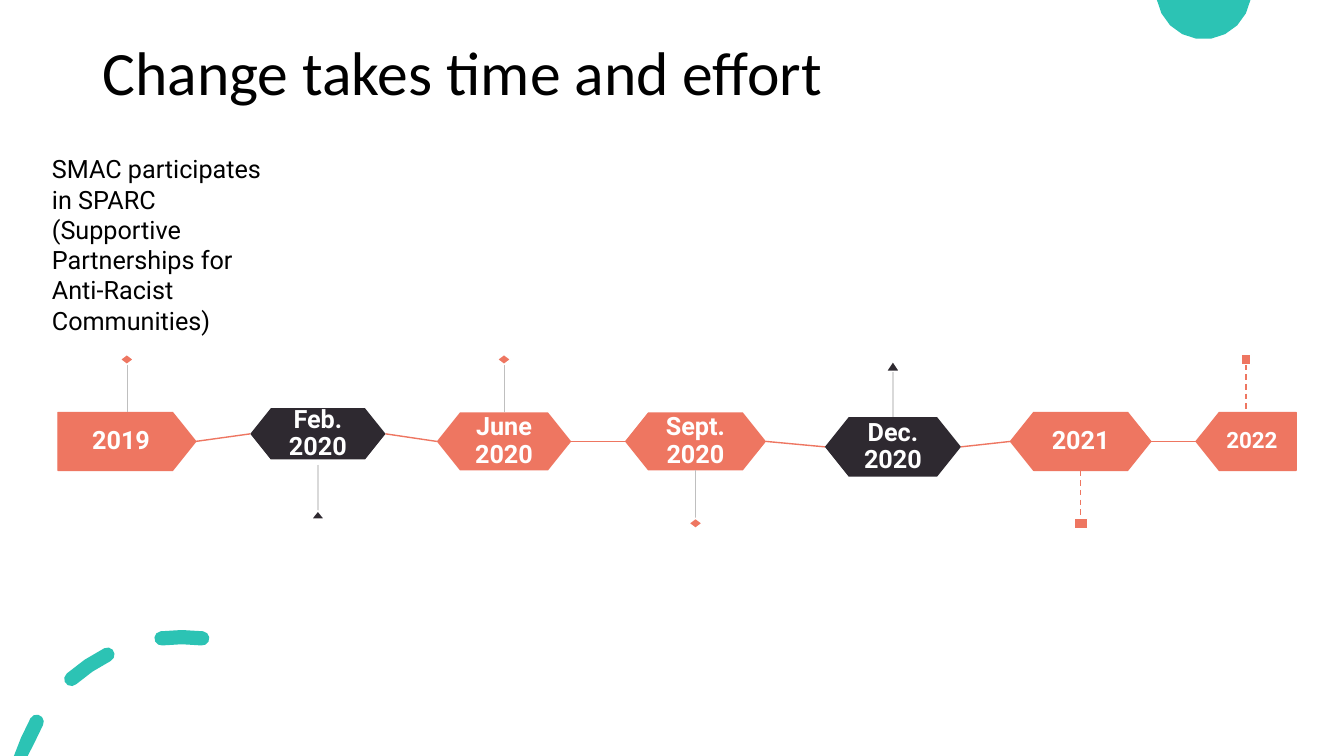
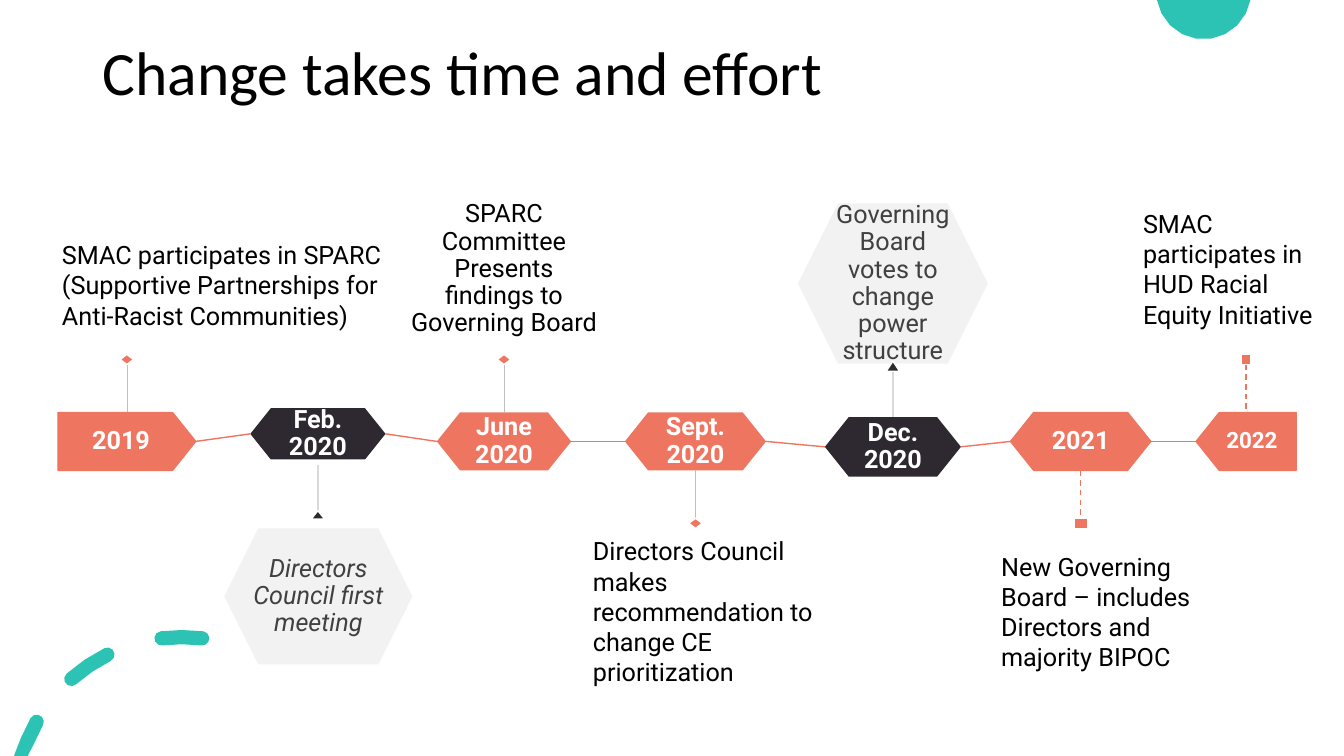
"""Build two timeline slides on a grid of 160 columns by 90 rows."""
from math import cos, radians, sin

from lxml import etree
from pptx import Presentation
from pptx.dml.color import RGBColor
from pptx.enum.dml import MSO_LINE
from pptx.enum.shapes import MSO_CONNECTOR, MSO_SHAPE as Preset
from pptx.enum.text import MSO_ANCHOR as Anchor, MSO_AUTO_SIZE, PP_ALIGN as Align
from pptx.oxml.ns import qn
from pptx.util import Emu, Inches, Pt

UNIT = 76200
TEAL, CORAL, DARK = "2CC3B4", "EE7661", "2E2930"
PALE, GREY, WHITE, BLACK = "F2F2F2", "404040", "FFFFFF", "000000"
SILVER, MIST = "BFBFBF", "D9D9D9"
TITLE = "Change takes time and effort"
SPARC = "SMAC participates in SPARC (Supportive Partnerships for Anti-Racist Communities)"
TRIANGLE = Preset.ISOSCELES_TRIANGLE

MILESTONES = [
    ("2019", Preset.PENTAGON, (6.9, 16.4, 52.55, 6.9), CORAL, Preset.DIAMOND, (42.2, 1.6, 1.2)),
    ("Feb. 2020", Preset.HEXAGON, (29.8, 16.1, 51.65, 6.1), DARK, TRIANGLE, (60.8, 1.6, 1)),
    ("June 2020", Preset.HEXAGON, (52, 16, 52.55, 6.9), CORAL, Preset.DIAMOND, (42.2, 1.6, 1.2)),
    ("Sept. 2020", Preset.HEXAGON, (74.4, 16.8, 52.55, 6.9), CORAL, Preset.DIAMOND, (61.7, 1.6, 1.2)),
    ("Dec. 2020", Preset.HEXAGON, (98.2, 16.2, 53.2, 7.1), DARK, TRIANGLE, (43, 1.6, 1.2)),
    ("2021", Preset.HEXAGON, (120.3, 16.7, 52.55, 6.9), CORAL, Preset.RECTANGLE, (61.7, 1.6, 1.2)),
    ("2022", Preset.PENTAGON, (142.4, 11.9, 52.55, 6.9), CORAL, Preset.RECTANGLE, (42.2, 1.2, 1.2)),
]
STEMS = {
    Preset.DIAMOND: (SILVER, 0.25, None),
    TRIANGLE: (MIST, 1, None),
    Preset.RECTANGLE: (CORAL, 1, MSO_LINE.DASH),
}
NOTE = {"inset": (0.1, 0.05)}
CALLOUT = {"inset": (0, 0.17), "align": Align.CENTER, "spacing": 0.9}
BADGE = {**CALLOUT, "anchor": Anchor.MIDDLE, "tint": GREY}
SLIDES = [
    [(SPARC, (5, 17.7, 29.4, 23), NOTE)],
    [
        (SPARC, (6.2, 27.9, 44.4, 12.1), NOTE),
        ("Directors Council first meeting", (26.7, 62.9, 22.4, 16.2), {**BADGE, "italic": True}),
        ("SPARC Committee Presents findings to Governing Board", (48.8, 24, 22.4, 18.2),
         {**CALLOUT, "anchor": Anchor.BOTTOM}),
        ("Directors Council makes recommendation to change CE prioritization",
         (69.4, 63.2, 29.4, 19.4), NOTE),
        ("Governing Board votes to change power structure", (95, 24.2, 22.6, 19.1), BADGE),
        ("New Governing Board – includes Directors and majority BIPOC", (118, 65, 27.5, 15.7), NOTE),
        ("SMAC participates in HUD Racial Equity Initiative", (134.9, 24.2, 23, 15.7), NOTE),
    ],
]


def paint(shape, fill, line=None):
    """Give a shape a flat fill and an optional one-point outline."""
    shape.shadow.inherit = False
    shape.fill.solid()
    shape.fill.fore_color.rgb = RGBColor.from_string(fill)
    if line:
        shape.line.color.rgb = RGBColor.from_string(line)
        shape.line.width = Pt(1)
    else:
        shape.line.fill.background()


def write(shape, text, inset, size=18, tint=BLACK, name="Roboto", align=Align.LEFT,
          anchor=Anchor.TOP, spacing=1, bold=False, italic=False):
    """Put one formatted paragraph into a shape."""
    frame = shape.text_frame
    frame.text = text
    frame.word_wrap = True
    frame.auto_size = MSO_AUTO_SIZE.NONE
    frame.vertical_anchor = anchor
    frame.margin_left = frame.margin_right = Inches(inset[0])
    frame.margin_top = frame.margin_bottom = Inches(inset[1])
    paragraph = frame.paragraphs[0]
    paragraph.alignment = align
    paragraph.line_spacing = spacing
    font = paragraph.runs[0].font
    font.name, font.size, font.bold, font.italic = name, Pt(size), bold, italic
    font.color.rgb = RGBColor.from_string(tint)


presentation = Presentation()
presentation.slide_width = Emu(160 * UNIT)
presentation.slide_height = Emu(90 * UNIT)

disc = [(143.3 + 5.64 * cos(radians(turn)), max(0, 5.64 * sin(radians(turn)) - 0.96))
        for turn in range(9, 172, 18)]
dashes = []
for start, end in [(60.5, 75), (26.5, 41.5), (-7, 7)]:
    middle_angle = (start + end) / 2
    trail = [(turn, end) for turn in range(0, 181, 36)] + [(180, middle_angle)]
    trail += [(turn, start) for turn in range(180, 361, 36)] + [(360, middle_angle)]
    dash_outline = []
    for turn, angle in trail:
        radius = 19.85 + 0.85 * cos(radians(turn))
        bearing = radians(angle) + 0.85 / 19.85 * sin(radians(turn))
        dash_outline.append((21.65 - radius * sin(bearing), min(90, 95.7 - radius * cos(bearing))))
    dashes.append(dash_outline)

for callouts in SLIDES:
    slide = presentation.slides.add_slide(presentation.slide_layouts[5])
    shapes = slide.shapes
    title = shapes.title
    title.left, title.top, title.width, title.height = [
        Emu(round(value * UNIT)) for value in (11, 0.3, 138, 17.4)]
    write(title, TITLE, (0.1, 0.05), 44, name="Calibri", anchor=Anchor.MIDDLE, spacing=0.9)

    for contours in ([disc], dashes):
        builder = None
        for contour in contours:
            points = [(round(x * UNIT), round(y * UNIT)) for x, y in contour]
            if builder is None:
                builder = shapes.build_freeform(*points[0], scale=1.0)
            else:
                builder.move_to(*points[0])
            builder.add_line_segments(points[1:], close=True)
        paint(builder.convert_to_shape(), TEAL)

    for text, box, style in callouts:
        place = [Emu(round(value * UNIT)) for value in box]
        if style.get("tint") == GREY:
            callout = shapes.add_shape(Preset.HEXAGON, *place)
            paint(callout, PALE)
        else:
            callout = shapes.add_textbox(*place)
        write(callout, text, **style)

    connectors = []
    previous_end = None
    for label, preset, (left, width, middle, height), fill, tip_preset, tip_size in MILESTONES:
        tip_top, tip_width, tip_height = tip_size
        top, centre = middle - height / 2, left + width / 2
        marker_box = (left, top, width, height)
        marker = shapes.add_shape(preset, *[Emu(round(value * UNIT)) for value in marker_box])
        marker.adjustments[0] = 0.4
        paint(marker, fill, fill if preset == Preset.PENTAGON or label == "2021" else None)
        last = label == "2022"
        if last:
            marker.element.spPr.xfrm.set("flipH", "1")
        write(marker, label, (0.13, 0.13) if last else (0.15, 0.15), 16 if last else 18, WHITE,
              align=Align.CENTER, anchor=Anchor.MIDDLE, spacing=0.9, bold=True)

        if previous_end:
            ends = [Emu(round(value * UNIT)) for value in (*previous_end, left, middle)]
            link = shapes.add_connector(MSO_CONNECTOR.STRAIGHT, *ends)
            connectors.append((link, CORAL, 1, None))
        previous_end = (left + width, middle)

        above = tip_top < middle
        stem_top = tip_top + tip_height if above else top + height
        stem_bottom = top if above else tip_top
        if tip_preset == TRIANGLE and not above:
            stem_top += 0.6
        ends = [Emu(round(value * UNIT)) for value in (centre, stem_top, centre, stem_bottom)]
        stem = shapes.add_connector(MSO_CONNECTOR.STRAIGHT, *ends)
        connectors.append((stem, *STEMS[tip_preset]))
        tip_box = (centre - tip_width / 2, tip_top, tip_width, tip_height)
        tip = shapes.add_shape(tip_preset, *[Emu(round(value * UNIT)) for value in tip_box])
        paint(tip, DARK if tip_preset == TRIANGLE else CORAL, WHITE)
        if tip_preset != TRIANGLE and above:
            stem.begin_connect(tip, 2)
        elif tip_preset != TRIANGLE:
            stem.end_connect(tip, 0)

    for connector, tint, weight, dash in connectors:
        connector.line.color.rgb = RGBColor.from_string(tint)
        connector.line.width = Pt(weight)
        if dash:
            connector.line.dash_style = dash
        etree.SubElement(connector.element.spPr, qn("a:effectLst"))

presentation.save("out.pptx")
